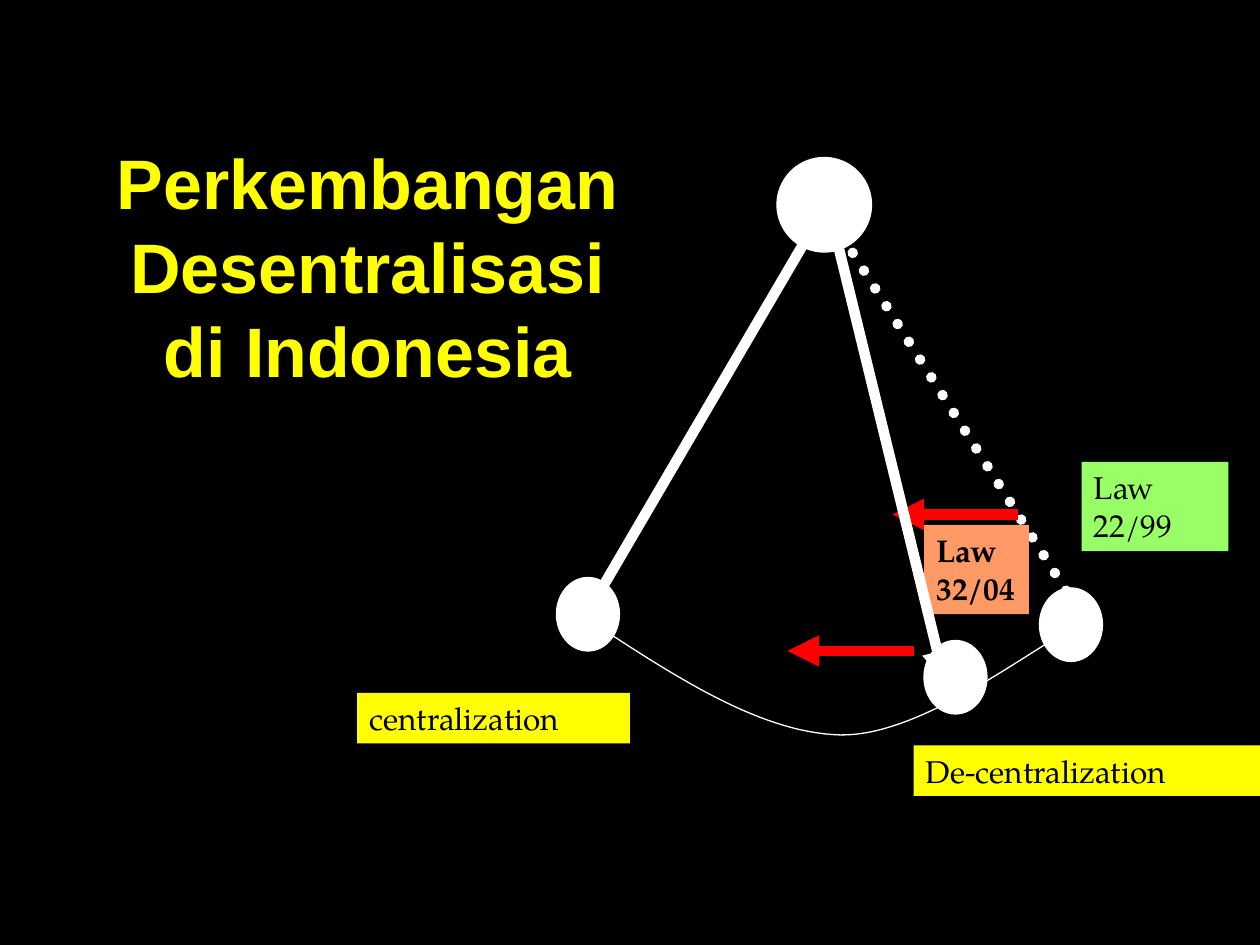
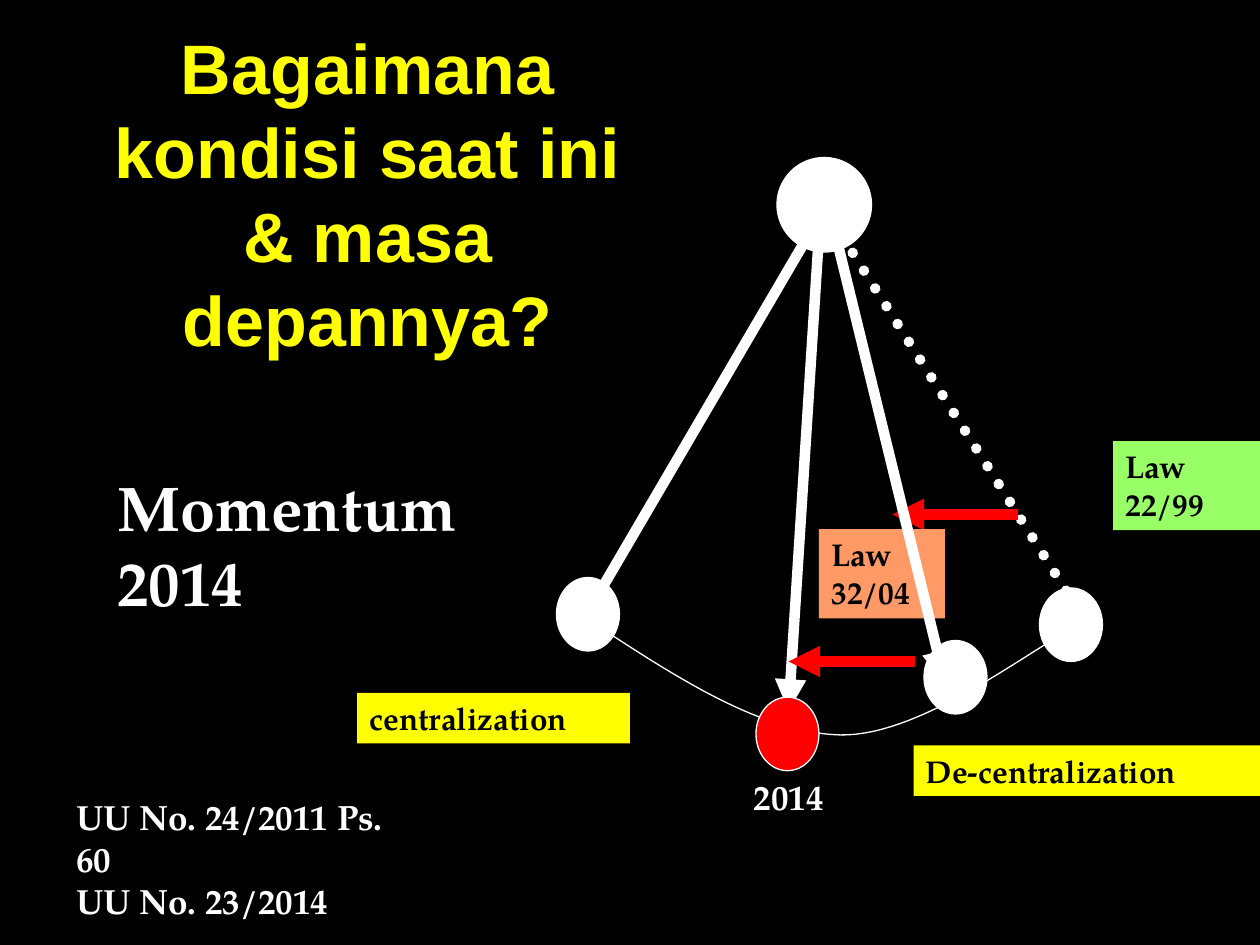
from lxml.etree import SubElement
from pptx import Presentation
from pptx.dml.color import RGBColor
from pptx.enum.dml import MSO_LINE
from pptx.enum.shapes import MSO_CONNECTOR, MSO_SHAPE
from pptx.enum.text import MSO_ANCHOR, MSO_AUTO_SIZE, PP_ALIGN
from pptx.oxml.ns import qn
from pptx.util import Pt

PX = 7620
BLACK = RGBColor(0, 0, 0)
WHITE = RGBColor(255, 255, 255)
YELLOW = RGBColor(255, 255, 0)
RED = RGBColor(255, 0, 0)
GREEN = RGBColor(0x99, 0xFF, 0x66)
ORANGE = RGBColor(0xFF, 0x99, 0x66)

SERIF = "TeX Gyre Pagella"
TITLE = {"name": "Arial", "size": Pt(40), "bold": True}
PLAIN = {"name": SERIF, "size": Pt(18), "bold": False}
BOLD = {**PLAIN, "bold": True}
NOTE = {**BOLD, "size": Pt(20)}
LARGE = {**BOLD, "size": Pt(36)}

CURVES = [
    [(560, 590), (642, 644), (724, 698), (800, 700)],
    [(800, 700), (877, 702), (983, 617), (1020, 600)],
]
STEPS = 30


def put(slide, box, lines=(), form=PLAIN, ink=BLACK, fill=None, oval=False):
    place = [n * PX for n in box]
    if fill is None:
        shape = slide.shapes.add_textbox(*place)
    else:
        kind = MSO_SHAPE.OVAL if oval else MSO_SHAPE.RECTANGLE
        shape = slide.shapes.add_shape(kind, *place)
        shape.shadow.inherit = False
        shape.fill.solid()
        shape.fill.fore_color.rgb = fill
        if oval:
            shape.line.color.rgb = WHITE
            shape.line.width = Pt(0.75)
        else:
            shape.line.fill.background()
    if not lines:
        return
    title = form is TITLE
    frame = shape.text_frame
    frame.text = "\n".join(lines)
    frame.word_wrap = True
    frame.auto_size = MSO_AUTO_SIZE.NONE if title else MSO_AUTO_SIZE.SHAPE_TO_FIT_TEXT
    frame.vertical_anchor = MSO_ANCHOR.MIDDLE if title else MSO_ANCHOR.TOP
    for para in frame.paragraphs:
        para.alignment = PP_ALIGN.CENTER if title else PP_ALIGN.LEFT
        if title:
            para.line_spacing = Pt(48)
        font = para.runs[0].font
        for key, value in form.items():
            setattr(font, key, value)
        font.color.rgb = ink


def link(slide, ends, color=WHITE, dots=False):
    line = slide.shapes.add_connector(MSO_CONNECTOR.STRAIGHT, *[n * PX for n in ends])
    line.line.color.rgb = color
    line.line.width = Pt(6)
    props = line._element.spPr
    stroke = props.find(qn("a:ln"))
    if dots:
        line.line.dash_style = MSO_LINE.ROUND_DOT
        stroke.set("cap", "rnd")
    else:
        SubElement(stroke, qn("a:tailEnd"), type="triangle")
    SubElement(props, qn("a:effectLst"))


deck = Presentation()
deck.slide_width = 1200 * PX
deck.slide_height = 900 * PX

pages = [
    {
        "title": "Perkembangan Desentralisasi di Indonesia",
        "top": 94,
        "form": PLAIN,
        "old": (1030, 440, 140, 85),
        "new": (880, 500, 100, 85),
        "arrow": (870, 620, 750, 620),
    },
    {
        "title": "Bagaimana kondisi saat ini & masa depannya?",
        "top": 25,
        "form": BOLD,
        "old": (1060, 420, 140, 85),
        "new": (780, 504, 120, 85),
        "arrow": (871, 630, 751, 630),
    },
]

for page in pages:
    slide = deck.slides.add_slide(deck.slide_layouts[6])
    slide.background.fill.solid()
    slide.background.fill.fore_color.rgb = BLACK
    form = page["form"]

    put(slide, (740, 150, 90, 90), fill=WHITE, oval=True)
    link(slide, (790, 190, 550, 600))
    for left, top in [(530, 550), (990, 560)]:
        put(slide, (left, top, 60, 70), fill=WHITE, oval=True)
    link(slide, (780, 190, 1020, 570), dots=True)

    points = []
    for curve in CURVES:
        for step in range(STEPS + 1):
            t = step / STEPS
            parts = [(1 - t) ** 3, 3 * t * (1 - t) ** 2, 3 * t * t * (1 - t), t ** 3]
            points.append([sum(w * n for w, n in zip(parts, axis)) * PX for axis in zip(*curve)])
    path = slide.shapes.build_freeform(*points[0])
    path.add_line_segments(points[1:], close=False)
    arc = path.convert_to_shape()
    arc.shadow.inherit = False
    arc.fill.background()
    arc.line.color.rgb = WHITE
    arc.line.width = Pt(0.75)

    put(slide, (340, 660, 260, 48), ["centralization"], form, fill=YELLOW)
    put(slide, (870, 710, 330, 48), ["De-centralization"], form, fill=YELLOW)
    put(slide, page["old"], ["Law 22/99"], form, fill=GREEN)
    link(slide, (970, 490, 850, 490), RED)
    put(slide, page["new"], ["Law 32/04"], BOLD, fill=ORANGE)
    link(slide, (790, 200, 900, 650))
    put(slide, (880, 610, 60, 70), fill=WHITE, oval=True)
    put(slide, (90, page["top"], 520, 317), [page["title"]], TITLE, YELLOW)
    if page is pages[1]:
        link(slide, (780, 223, 751, 677))
        put(slide, (720, 664, 60, 70), fill=RED, oval=True)
    link(slide, page["arrow"], RED)

notes = [
    ((61, 752, 338, 92), ["UU No. 24/2011 Ps. 60", "UU No. 23/2014"], NOTE),
    ((100, 440, 461, 85), ["Momentum 2014"], LARGE),
    ((706, 733, 92, 53), ["2014"], NOTE),
]
for box, lines, form in notes:
    put(slide, box, lines, form, WHITE)

deck.save("out.pptx")
